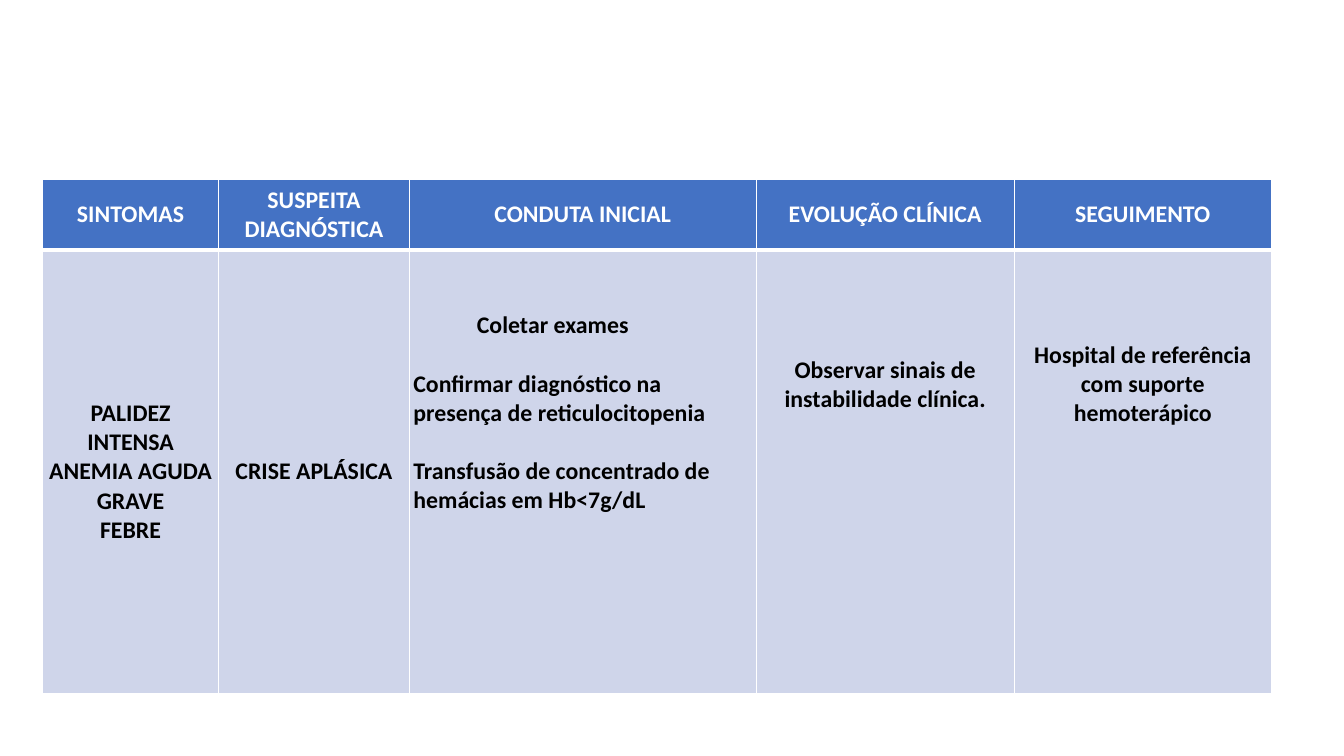
"""Build a one-slide clinical conduct table for aplastic crisis."""
from dataclasses import dataclass

from lxml.etree import SubElement
from pptx import Presentation
from pptx.dml.color import RGBColor
from pptx.enum.text import MSO_VERTICAL_ANCHOR as Anchor, PP_PARAGRAPH_ALIGNMENT as Align
from pptx.oxml.ns import qn
from pptx.slide import Slide
from pptx.table import _Cell as Cell
from pptx.util import Emu, Pt

EMU_PER_PX = 9144


@dataclass(frozen=True)
class Theme:
    font: str = "Calibri"
    text_size: int = 17
    header_fill: str = "4472C4"
    header_text: str = "FFFFFF"
    body_fill: str = "CFD5EA"
    body_text: str = "000000"
    border: str = "FFFFFF"
    thin_border: int = 1
    thick_border: int = 3


@dataclass(frozen=True)
class Column:
    width: int
    header: str
    paragraphs: tuple[str, ...]
    align: Align = Align.CENTER
    bottom_inset: int = 4
    gap: int = 0
    first_indent: int = 0


THEME = Theme()
TABLE_LEFT, TABLE_TOP = 42, 178
HEADER_HEIGHT, BODY_HEIGHT = 70, 440
INSET = 4
COLUMNS = (
    Column(175, "SINTOMAS", ("PALIDEZ INTENSA", "ANEMIA AGUDA GRAVE", "FEBRE")),
    Column(189, "SUSPEITA DIAGNÓSTICA", ("CRISE APLÁSICA",)),
    Column(
        344,
        "CONDUTA INICIAL",
        (
            "Coletar exames",
            "Confirmar diagnóstico na presença de reticulocitopenia",
            "Transfusão de concentrado de hemácias em Hb<7g/dL",
        ),
        align=Align.LEFT,
        bottom_inset=120,
        gap=29,
        first_indent=63,
    ),
    Column(256, "EVOLUÇÃO CLÍNICA", ("Observar sinais de instabilidade clínica.",), bottom_inset=177),
    Column(255, "SEGUIMENTO", ("Hospital de referência com suporte hemoterápico",), bottom_inset=177),
)


def px(length: int) -> Emu:
    """Convert layout pixels to EMU."""
    return Emu(length * EMU_PER_PX)


def set_borders(cell: Cell, top: int, bottom: int) -> None:
    """Draw the four cell borders with the given top and bottom widths."""
    properties = cell._tc.get_or_add_tcPr()
    widths = {"a:lnL": THEME.thin_border, "a:lnR": THEME.thin_border, "a:lnT": top, "a:lnB": bottom}
    for tag, width in widths.items():
        line = SubElement(properties, qn(tag), w=str(Pt(width)))
        fill = SubElement(line, qn("a:solidFill"))
        SubElement(fill, qn("a:srgbClr"), val=THEME.border)


def fill_cell(
    cell: Cell, paragraphs: tuple[str, ...], fill: str, color: str,
    align: Align = Align.CENTER, bottom_inset: int = INSET, gap: int = 0,
) -> None:
    """Write and format the paragraphs of one cell."""
    cell.fill.solid()
    cell.fill.fore_color.rgb = RGBColor.from_string(fill)
    cell.vertical_anchor = Anchor.MIDDLE
    cell.margin_left = cell.margin_right = cell.margin_top = px(INSET)
    cell.margin_bottom = px(bottom_inset)
    cell.text_frame.text = "\n".join(paragraphs)
    for index, paragraph in enumerate(cell.text_frame.paragraphs):
        paragraph.alignment = align
        if index and gap:
            paragraph.space_before = px(gap)
        for run in paragraph.runs:
            run.font.name = THEME.font
            run.font.size = Pt(THEME.text_size)
            run.font.bold = True
            run.font.color.rgb = RGBColor.from_string(color)


def add_conduct_table(slide: Slide) -> None:
    """Add the table with one header row and one body row."""
    total_width = sum(column.width for column in COLUMNS)
    table = slide.shapes.add_table(
        2, len(COLUMNS), px(TABLE_LEFT), px(TABLE_TOP), px(total_width), px(HEADER_HEIGHT + BODY_HEIGHT)
    ).table
    table.rows[0].height = px(HEADER_HEIGHT)
    table.rows[1].height = px(BODY_HEIGHT)
    for index, column in enumerate(COLUMNS):
        table.columns[index].width = px(column.width)
        header, body = table.cell(0, index), table.cell(1, index)
        set_borders(header, THEME.thin_border, THEME.thick_border)
        set_borders(body, THEME.thick_border, THEME.thin_border)
        fill_cell(header, (column.header,), THEME.header_fill, THEME.header_text)
        fill_cell(
            body, column.paragraphs, THEME.body_fill, THEME.body_text,
            column.align, column.bottom_inset, column.gap,
        )
        if column.first_indent:
            first = body.text_frame.paragraphs[0]
            first._p.get_or_add_pPr().set("marL", str(px(column.first_indent)))


def main() -> None:
    """Create the presentation and save it."""
    presentation = Presentation()
    presentation.slide_width = px(1333)
    presentation.slide_height = px(750)
    slide = presentation.slides.add_slide(presentation.slide_layouts[6])
    add_conduct_table(slide)
    presentation.save("out.pptx")


if __name__ == "__main__":
    main()
